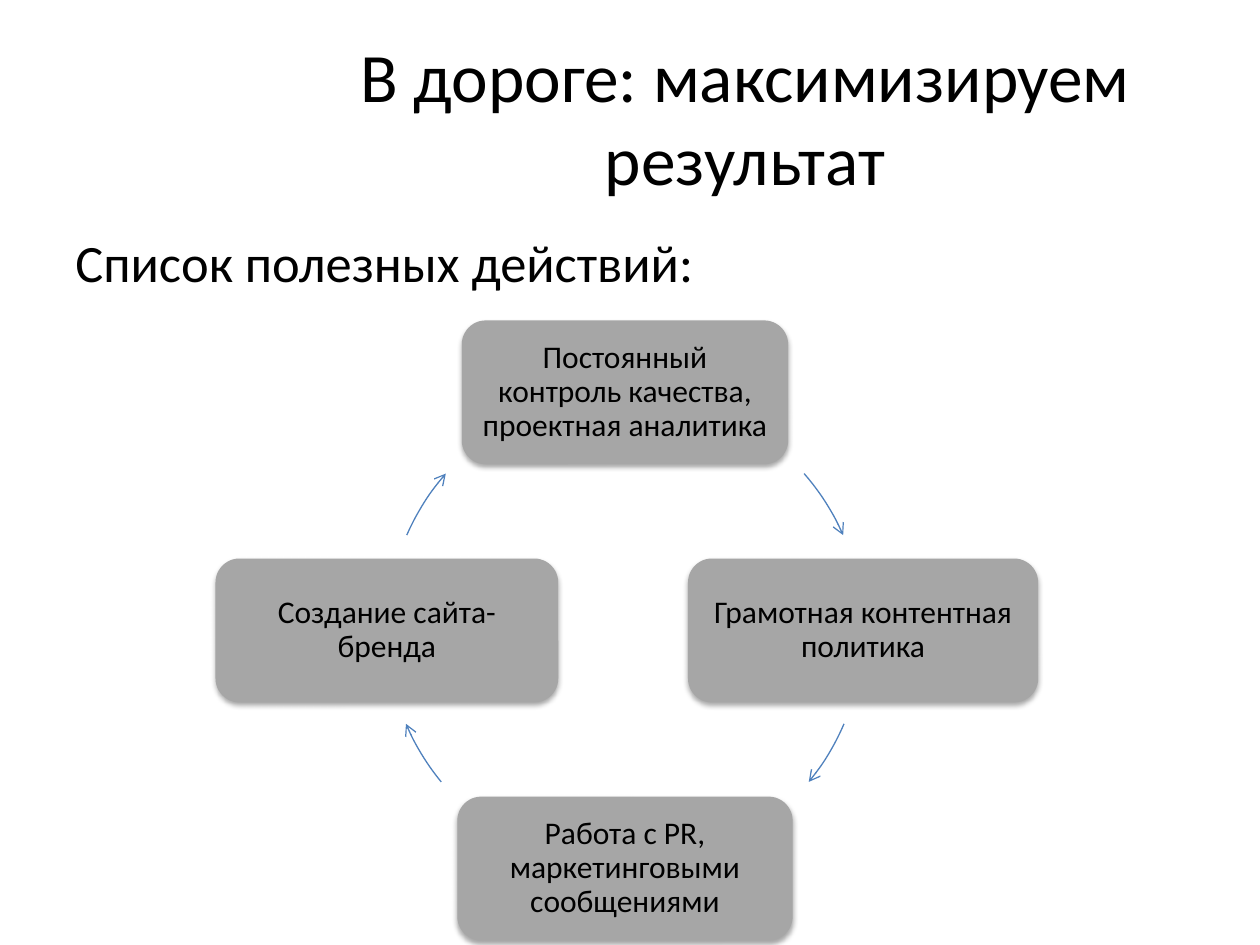
import math

import pptx
import pptx.dml.color
import pptx.enum.shapes
import pptx.enum.text
import pptx.util
from lxml import etree
from pptx.oxml.ns import qn

Cm = pptx.util.Cm
Pt = pptx.util.Pt
COLORS = {"text": "000000", "box": "A6A6A6", "arrow": "4F81BD", "shadow": "000000"}
FONT = "Calibri"

# Clockwise from the top: label, box width in cm, arc to the next box in degrees
STEPS = [
    ("Постоянный контроль качества, проектная аналитика", 6.58, (318.8, 336.4)),
    ("Грамотная контентная политика", 7.06, (23.1, 39.5)),
    ("Работа с PR, маркетинговыми сообщениями", 6.76, (140.5, 156.9)),
    ("Создание сайта-бренда", 6.91, (203.6, 221.2)),
]


def rgb(name):
    return pptx.dml.color.RGBColor.from_string(COLORS[name])


def write(frame, text, size, centered):
    frame.word_wrap = True
    para = frame.paragraphs[0]
    para.text = text
    para.font.name = FONT
    para.font.size = Pt(size)
    para.font.color.rgb = rgb("text")
    align = pptx.enum.text.PP_ALIGN
    para.alignment = align.CENTER if centered else align.LEFT
    return para


def add_text(page, left, top, width, height, text, size, centered=False):
    box = page.shapes.add_textbox(Cm(left), Cm(top), Cm(width), Cm(height))
    write(box.text_frame, text, size, centered)
    if centered:
        box.text_frame.vertical_anchor = pptx.enum.text.MSO_ANCHOR.MIDDLE


def add_soft_shadow(shape):
    shape.shadow.inherit = False
    effects = shape.element.spPr.find(qn("a:effectLst"))
    shadow = etree.SubElement(effects, qn("a:outerShdw"), blurRad=str(Pt(3.1)),
                              dist=str(Pt(1.8)), dir="5400000", rotWithShape="0")
    color = etree.SubElement(shadow, qn("a:srgbClr"), val=COLORS["shadow"])
    etree.SubElement(color, qn("a:alpha"), val="35000")


def add_step(page, center_x, center_y, width, height, text):
    box = page.shapes.add_shape(
        pptx.enum.shapes.MSO_SHAPE.ROUNDED_RECTANGLE,
        Cm(center_x - width / 2), Cm(center_y - height / 2), Cm(width), Cm(height))
    box.fill.solid()
    box.fill.fore_color.rgb = rgb("box")
    box.line.fill.background()
    add_soft_shadow(box)
    frame = box.text_frame
    frame.margin_left = frame.margin_right = Cm(0.18)
    frame.margin_top = frame.margin_bottom = Cm(0.18)
    frame.vertical_anchor = pptx.enum.text.MSO_ANCHOR.MIDDLE
    para = write(frame, text, 18, centered=True)
    para.line_spacing = 0.9


def add_arc_arrow(page, left, top, diameter, angles):
    arc = page.shapes.add_shape(pptx.enum.shapes.MSO_SHAPE.ARC,
                                Cm(left), Cm(top), Cm(diameter), Cm(diameter))
    for index, angle in enumerate(angles):
        arc.adjustments[index] = angle * 0.6  # 60000 units a degree, scaled by 100000
    arc.fill.background()
    arc.line.color.rgb = rgb("arrow")
    arc.line.width = Pt(0.75)
    arc.shadow.inherit = False
    line = arc.element.spPr.find(qn("a:ln"))
    etree.SubElement(line, qn("a:tailEnd"), type="arrow")


def add_cycle(page, left, top, diameter, box_height):
    """Place the steps on a circle inside the given square."""
    radius = diameter / 2
    for index, (text, width, angles) in enumerate(STEPS):
        turn = math.tau * index / len(STEPS)
        add_step(page, left + radius * (1 + math.sin(turn)),
                 top + radius * (1 - math.cos(turn)), width, box_height, text)
        add_arc_arrow(page, left, top, diameter, angles)


def main():
    deck = pptx.Presentation()
    deck.slide_width, deck.slide_height = Cm(25.4), Cm(19.05)
    page = deck.slides.add_slide(deck.slide_layouts[6])

    # Title and lead-in
    add_text(page, 5.92, 0.76, 18.21, 3.18, "В дороге: максимизируем результат", 39.6, True)
    add_text(page, 1.27, 4.52, 21.87, 1.55, "Список полезных действий:", 30)

    # Cycle of actions
    add_cycle(page, 7.8, 7.91, 9.6, 2.9)
    deck.save("out.pptx")


if __name__ == "__main__":
    main()
